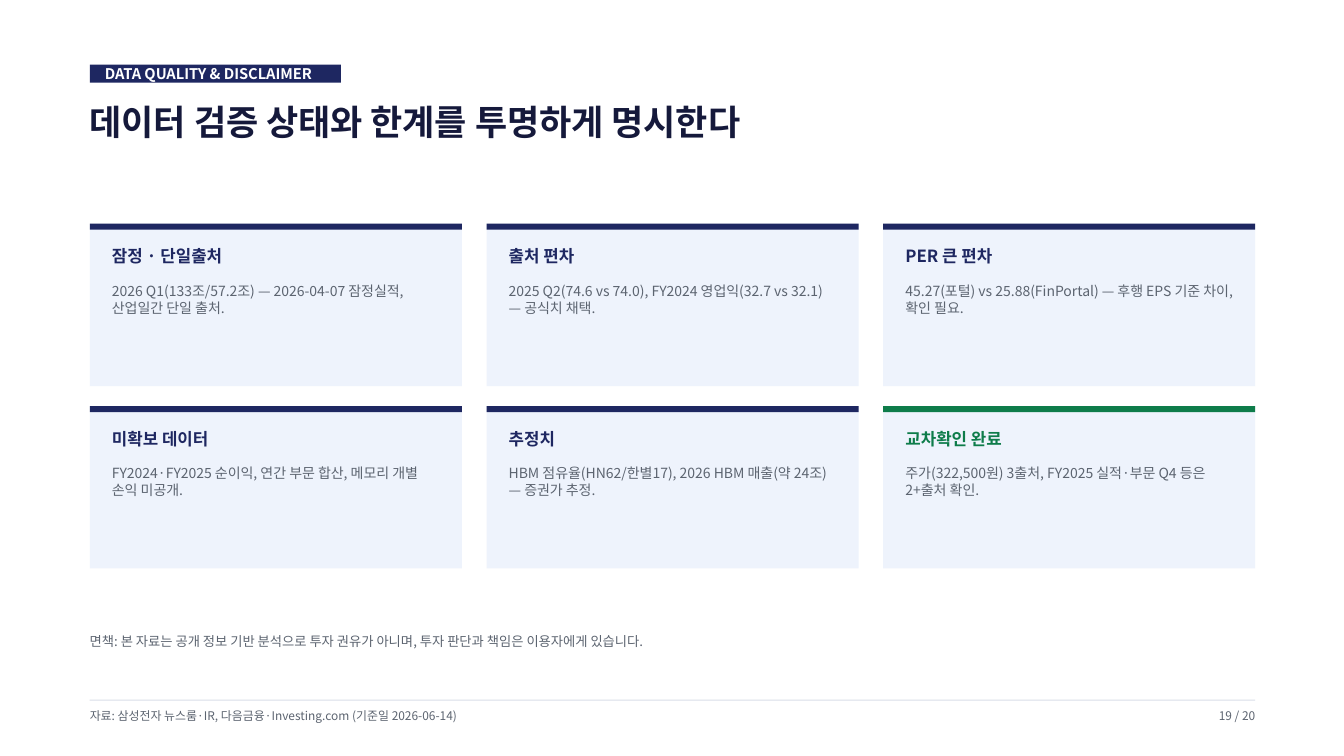
from lxml import etree
from pptx import Presentation
from pptx.dml.color import RGBColor
from pptx.enum.shapes import MSO_SHAPE
from pptx.enum.text import MSO_ANCHOR, PP_ALIGN
from pptx.oxml.ns import qn
from pptx.util import Inches, Pt

RECT = MSO_SHAPE.RECTANGLE
TOP, MIDDLE = MSO_ANCHOR.TOP, MSO_ANCHOR.MIDDLE
LEFT, RIGHT = PP_ALIGN.LEFT, PP_ALIGN.RIGHT
FONT = "Noto Sans CJK KR"
NAVY = RGBColor(0x1E, 0x27, 0x61)
INK = RGBColor(0x15, 0x19, 0x3B)
GREEN = RGBColor(0x0E, 0x7C, 0x4A)
GRAY = RGBColor(0x5C, 0x64, 0x70)
PALE = RGBColor(0xEE, 0xF3, 0xFC)
RULE = RGBColor(0xD9, 0xDE, 0xE8)
WHITE = RGBColor(0xFF, 0xFF, 0xFF)

prs = Presentation()
prs.slide_width, prs.slide_height = Inches(13.33), Inches(7.5)
s = prs.slides.add_slide(prs.slide_layouts[6])


def add_bar(x, y, w, h, color):
    sp = s.shapes.add_shape(RECT, Inches(x), Inches(y), Inches(w), Inches(h))
    sp.shadow.inherit = False
    sp.fill.solid()
    sp.fill.fore_color.rgb = color
    sp.line.fill.background()
    return sp


def add_text(text, x=0, y=0, w=0, h=0, size=10, color=GRAY, bold=False,
             align=LEFT, anchor=TOP, inset=0, wrap=True, shape=None):
    """Write text into the given shape, or into a new text box."""
    sp = shape or s.shapes.add_textbox(Inches(x), Inches(y), Inches(w), Inches(h))
    tf = sp.text_frame
    tf.word_wrap = wrap
    tf.vertical_anchor = anchor
    tf.margin_left = tf.margin_right = Inches(inset)
    tf.margin_top = tf.margin_bottom = 0
    p = tf.paragraphs[0]
    p.alignment = align
    r = p.add_run()
    r.text = text
    r.font.name = FONT
    r.font.size = Pt(size)
    r.font.bold = bold
    r.font.color.rgb = color
    etree.SubElement(r.font._element, qn("a:ea"), typeface=FONT)


MARGIN, CONTENT_W = 0.89, 11.56

# Header
tag = add_bar(MARGIN, 0.64, 2.49, 0.18, NAVY)
add_text("DATA QUALITY & DISCLAIMER", shape=tag, size=10.5, color=WHITE,
         bold=True, anchor=MIDDLE, inset=0.15, wrap=False)
add_text("데이터 검증 상태와 한계를 투명하게 명시한다", MARGIN, 1, CONTENT_W, 0.42,
         size=25, color=INK, bold=True)

# Cards, three to a row
CARDS = [
    ("잠정 · 단일출처", "2026 Q1(133조/57.2조) — 2026-04-07 잠정실적, 산업일간 단일 출처.", NAVY),
    ("출처 편차", "2025 Q2(74.6 vs 74.0), FY2024 영업익(32.7 vs 32.1) — 공식치 채택.", NAVY),
    ("PER 큰 편차", "45.27(포털) vs 25.88(FinPortal) — 후행 EPS 기준 차이, 확인 필요.", NAVY),
    ("미확보 데이터", "FY2024·FY2025 순이익, 연간 부문 합산, 메모리 개별 손익 미공개.", NAVY),
    ("추정치", "HBM 점유율(HN62/한별17), 2026 HBM 매출(약 24조) — 증권가 추정.", NAVY),
    ("교차확인 완료", "주가(322,500원) 3출처, FY2025 실적·부문 Q4 등은 2+출처 확인.", GREEN),
]
COLUMNS, CARD_W, CARD_H, PAD = 3, 3.69, 1.61, 0.22
STEP_X = (CONTENT_W - CARD_W) / (COLUMNS - 1)
STEP_Y = 1.81
TEXT_W = CARD_W - 2 * PAD
for i, (heading, body, accent) in enumerate(CARDS):
    row, col = divmod(i, COLUMNS)
    x, y = MARGIN + col * STEP_X, 2.22 + row * STEP_Y
    add_bar(x, y, CARD_W, CARD_H, PALE)
    add_bar(x, y, CARD_W, 0.06, accent)
    add_text(heading, x + PAD, y + 0.22, TEXT_W, 0.2, size=12, color=accent, bold=True)
    add_text(body, x + PAD, y + 0.58, TEXT_W, 0.34)

# Disclaimer and footer
add_text("면책: 본 자료는 공개 정보 기반 분석으로 투자 권유가 아니며, 투자 판단과 책임은 이용자에게 있습니다.",
         MARGIN, 6.28, CONTENT_W, 0.16, size=9.5)
add_bar(MARGIN, 6.94, CONTENT_W, 0.01, RULE)
add_text("자료: 삼성전자 뉴스룸·IR, 다음금융·Investing.com (기준일 2026-06-14)",
         MARGIN, 7.03, 10.58, 0.14, size=8.5)
add_text("19 / 20", 11.47, 7.03, 0.98, 0.14, size=8.5, align=RIGHT)

prs.save("out.pptx")
